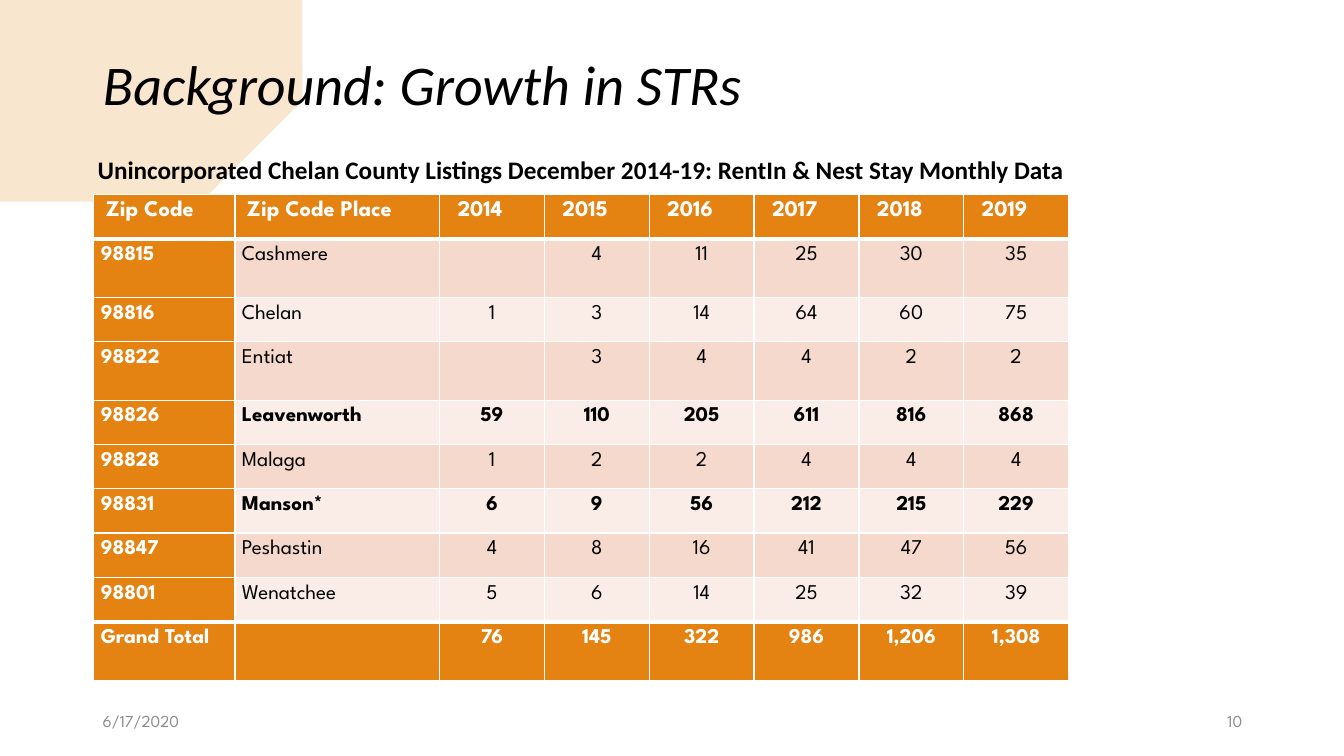
from pptx import Presentation
from pptx.dml.color import RGBColor
from pptx.enum.text import MSO_ANCHOR, MSO_AUTO_SIZE, PP_ALIGN
from pptx.oxml.xmlchemy import OxmlElement
from pptx.util import Inches, Pt

COLORS = {"orange": "E48312", "dark band": "F5D9CC", "light band": "FAEDE7",
          "white": "FFFFFF", "black": "000000", "gray": "8C8C8C"}

# Outline of the brush stroke: smooth top, ragged right end, smooth bottom
STROKE_POINTS = [
    (0, 0.34), (0.66, 0.38), (1.5, 0.38), (2.1, 0.42), (2.65, 0.4), (2.8, 0.47),
    (2.53, 0.56), (2.62, 0.62), (2.38, 0.66), (2.75, 0.74), (2.51, 0.75), (2.9, 0.85),
    (2.63, 0.88), (3.3, 0.94), (3.18, 1.06), (2.8, 1.2), (2.74, 1.28), (3.08, 1.28),
    (2.69, 1.38), (2.52, 1.48), (2.63, 1.48), (1.97, 1.72), (1.02, 1.88), (0.5, 1.91),
    (0, 1.88)]

PLACES = [
    ("98815", "Cashmere", [None, 4, 11, 25, 30, 35]),
    ("98816", "Chelan", [1, 3, 14, 64, 60, 75]),
    ("98822", "Entiat", [None, 3, 4, 4, 2, 2]),
    ("98826", "Leavenworth", [59, 110, 205, 611, 816, 868]),
    ("98828", "Malaga", [1, 2, 2, 4, 4, 4]),
    ("98831", "Manson*", [6, 9, 56, 212, 215, 229]),
    ("98847", "Peshastin", [4, 8, 16, 41, 47, 56]),
    ("98801", "Wenatchee", [5, 6, 14, 25, 32, 39])]
BOLD_PLACES = {"Leavenworth", "Manson*"}
COLUMN_WIDTHS = [1.4, 2.03] + [1.04] * 6


def format_paragraph(paragraph, font_name, size, color, bold=False, align=PP_ALIGN.LEFT):
    paragraph.alignment = align
    font = paragraph.font
    font.name, font.size, font.bold = font_name, Pt(size), bold
    font.color.rgb = RGBColor.from_string(COLORS[color])


def add_cell_borders(cell, top, bottom):
    """Draw white borders; top and bottom are widths in points."""
    properties = cell._tc.get_or_add_tcPr()
    for index, (side, width) in enumerate([("L", 1), ("R", 1), ("T", top), ("B", bottom)]):
        line = OxmlElement(f"a:ln{side}")
        line.set("w", str(Pt(width)))
        fill = OxmlElement("a:solidFill")
        color = OxmlElement("a:srgbClr")
        color.set("val", COLORS["white"])
        fill.append(color)
        line.append(fill)
        properties.insert(index, line)


presentation = Presentation()
presentation.slide_width, presentation.slide_height = Inches(13.33), Inches(7.5)
slide = presentation.slides.add_slide(presentation.slide_layouts[5])

# Title
title = slide.shapes.title
title.left, title.top, title.width, title.height = map(Inches, (0.92, 0.4, 11.5, 0.94))
title.text_frame.text = "Background: Growth in STRs"
title.text_frame.auto_size = MSO_AUTO_SIZE.NONE
title.text_frame.vertical_anchor = MSO_ANCHOR.MIDDLE
heading = title.text_frame.paragraphs[0]
format_paragraph(heading, "Calibri", 40, "black")
heading.font.italic = True
heading.line_spacing = 0.9

# Brush stroke behind the title
builder = slide.shapes.build_freeform(*STROKE_POINTS[0], scale=Inches(1))
builder.add_line_segments(STROKE_POINTS[1:], close=True)
stroke = builder.convert_to_shape()
stroke.shadow.inherit = False
stroke.line.fill.background()
stroke.fill.solid()
stroke.fill.fore_color.rgb = RGBColor.from_string(COLORS["orange"])
alpha = OxmlElement("a:alpha")
alpha.set("val", "20000")
stroke.fill._xPr.solidFill[0].append(alpha)
title.element.addprevious(stroke.element)

# Listings table
listings = [["Zip Code", "Zip Code Place"] + [f" {year}" for year in range(2014, 2020)]]
for zip_code, place, counts in PLACES:
    listings.append([zip_code, place] + [str(count or "") for count in counts])
yearly_counts = zip(*[counts for _, _, counts in PLACES])
listings.append(["Grand Total", ""]
                + [f"{sum(count or 0 for count in year):,}" for year in yearly_counts])

table_frame = slide.shapes.add_table(len(listings), len(COLUMN_WIDTHS), Inches(0.93),
                                     Inches(1.93), Inches(9.66), Inches(4.87))
table = table_frame.table
table.first_row = table.horz_banding = False
for column, width in zip(table.columns, COLUMN_WIDTHS):
    column.width = Inches(width)
last_row = len(listings) - 1
for row, values in enumerate(listings):
    table.rows[row].height = Inches(0.58 if "" in values else 0.44)
    is_header, is_total = row == 0, row == last_row
    for column, value in enumerate(values):
        cell = table.cell(row, column)
        is_accent = is_header or is_total or column == 0
        band = "dark band" if row % 2 else "light band"
        cell.fill.solid()
        cell.fill.fore_color.rgb = RGBColor.from_string(COLORS["orange" if is_accent else band])
        cell.margin_left = cell.margin_right = Inches(0.12 if is_header else 0.07)
        cell.margin_top = cell.margin_bottom = Inches(0.06 if is_header else 0.07)
        cell.text = value
        format_paragraph(cell.text_frame.paragraphs[0], "League Spartan",
                         16 if is_header else 15, "white" if is_accent else "black",
                         is_accent or values[1] in BOLD_PLACES,
                         PP_ALIGN.CENTER if column > 1 and not is_header else PP_ALIGN.LEFT)
        add_cell_borders(cell, top=3 if row in (1, last_row) else 1,
                         bottom=3 if row in (0, last_row - 1) else 1)

# Table caption, date and slide number
caption = "Unincorporated Chelan County Listings December 2014-19: RentIn & Nest Stay Monthly Data"
for text, box, font_name, size, color, bold, align in [
        (caption, (0.87, 1.48, 10.2, 0.4), "Calibri", 18, "black", True, PP_ALIGN.LEFT),
        ("6/17/2020", (0.92, 6.95, 3, 0.4), "League Spartan", 12, "gray", False, PP_ALIGN.LEFT),
        ("10", (9.42, 6.95, 3, 0.4), "League Spartan", 12, "gray", False, PP_ALIGN.RIGHT)]:
    text_box = slide.shapes.add_textbox(*map(Inches, box))
    text_frame = text_box.text_frame
    text_frame.word_wrap = True
    text_frame.vertical_anchor = MSO_ANCHOR.TOP if bold else MSO_ANCHOR.MIDDLE
    text_frame.text = text
    format_paragraph(text_frame.paragraphs[0], font_name, size, color, bold, align)
    text_frame.paragraphs[0].space_after = Pt(0 if bold else 6)

presentation.save("out.pptx")
